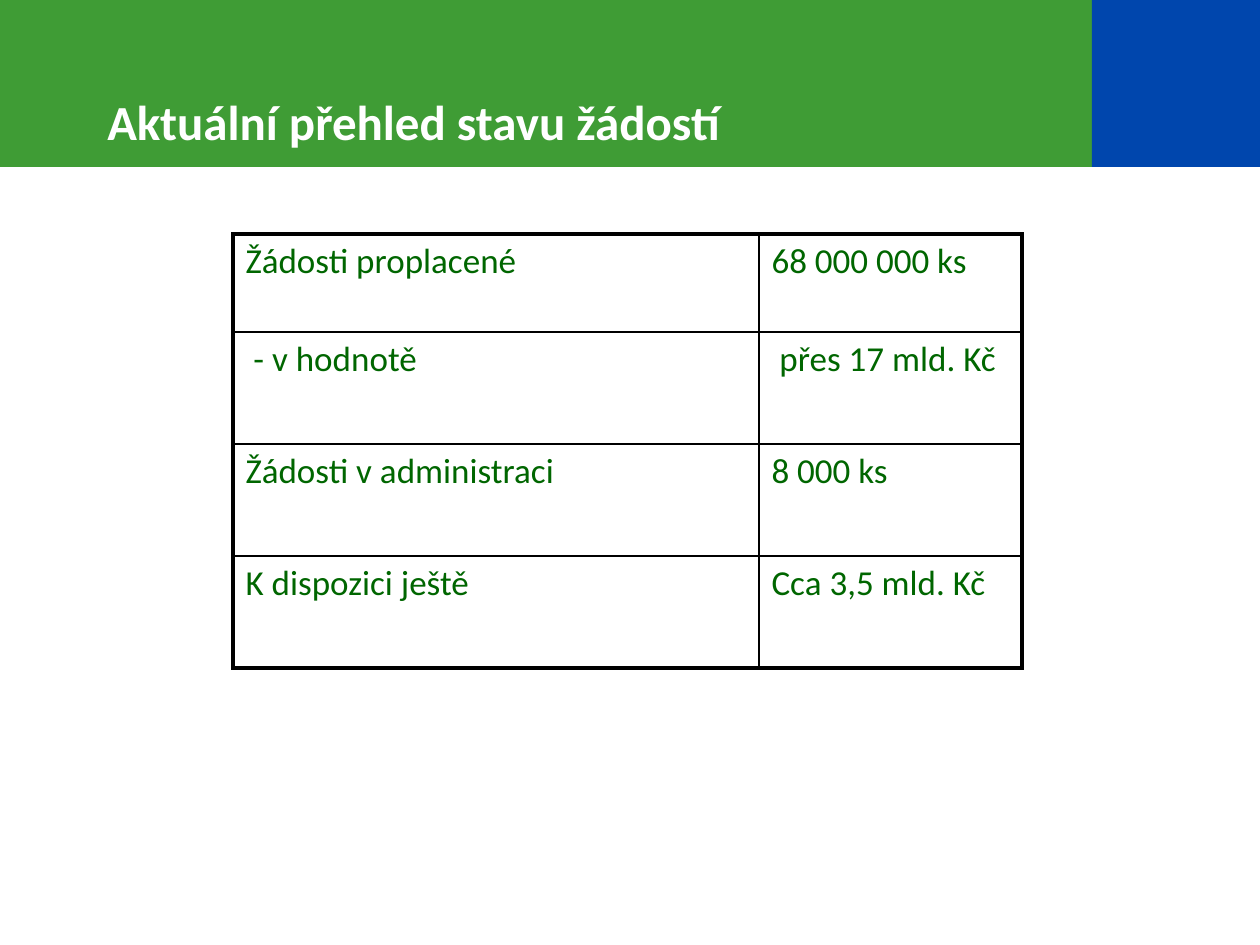
import pptx
import pptx.util
import pptx.dml.color
import pptx.enum.shapes
import pptx.enum.text
import pptx.oxml.ns
from lxml import etree

# Content
TITLE = "Aktuální přehled stavu žádostí"
ROWS = [
    ("Žádosti proplacené", "68 000 000 ks"),
    (" - v hodnotě", " přes 17 mld. Kč"),
    ("Žádosti v administraci", "8 000 ks"),
    ("K dispozici ještě", "Cca 3,5 mld. Kč"),
]

# Layout in px, 126 px to the inch
PX = 914400 // 126
SLIDE_SIZE = (1260, 945)
HEADER_HEIGHT = 167
HEADER_SPLIT = 1092
TITLE_BOX = (95, 85, 1071, 131)
TABLE_LEFT, TABLE_TOP = 233, 234
COLUMN_WIDTHS = (526, 263)
ROW_HEIGHTS = (98, 112, 112, 112)
OUTER_LINE, INNER_LINE = 2.25, 1

FONT = "Calibri"
COLORS = {"header": "3F9C35", "accent": "0046AD", "title": "FFFFFF",
          "text": "006600", "border": "000000"}


def px(*lengths):
    return [length * PX for length in lengths]


def rgb(name):
    return pptx.dml.color.RGBColor.from_string(COLORS[name])


def write_text(frame, text, size, color, bold=False):
    frame.word_wrap = True
    frame.vertical_anchor = pptx.enum.text.MSO_ANCHOR.TOP
    run = frame.paragraphs[0].add_run()
    run.text = text
    run.font.name = FONT
    run.font.size = pptx.util.Pt(size)
    run.font.bold = bold
    run.font.color.rgb = rgb(color)


def add_band(slide, left, right, color):
    shape = slide.shapes.add_shape(
        pptx.enum.shapes.MSO_SHAPE.RECTANGLE,
        *px(left, 0, right - left, HEADER_HEIGHT))
    shape.shadow.inherit = False
    shape.fill.solid()
    shape.fill.fore_color.rgb = rgb(color)
    shape.line.fill.background()


def set_borders(cell, outer_sides):
    properties = cell._tc.get_or_add_tcPr()
    qn = pptx.oxml.ns.qn
    for index, side in enumerate("LRTB"):
        width = OUTER_LINE if side in outer_sides else INNER_LINE
        line = etree.Element(qn(f"a:ln{side}"), w=str(int(width * 12700)))
        fill = etree.SubElement(line, qn("a:solidFill"))
        etree.SubElement(fill, qn("a:srgbClr"), val=COLORS["border"])
        properties.insert(index, line)


def add_status_table(slide):
    table = slide.shapes.add_table(
        len(ROWS), len(COLUMN_WIDTHS),
        *px(TABLE_LEFT, TABLE_TOP, sum(COLUMN_WIDTHS), sum(ROW_HEIGHTS))).table
    table.first_row = table.horz_banding = False
    for column, width in zip(table.columns, COLUMN_WIDTHS):
        column.width = width * PX
    for row, height in zip(table.rows, ROW_HEIGHTS):
        row.height = height * PX
    for row_index, texts in enumerate(ROWS):
        for column_index, text in enumerate(texts):
            cell = table.cell(row_index, column_index)
            cell.fill.background()
            write_text(cell.text_frame, text, size=20, color="text")
            edges = {"L": column_index == 0, "R": column_index == len(texts) - 1,
                     "T": row_index == 0, "B": row_index == len(ROWS) - 1}
            set_borders(cell, [side for side, outer in edges.items() if outer])


def main():
    presentation = pptx.Presentation()
    presentation.slide_width, presentation.slide_height = px(*SLIDE_SIZE)
    slide = presentation.slides.add_slide(presentation.slide_layouts[6])

    # Header bands and title
    add_band(slide, 0, HEADER_SPLIT, "header")
    add_band(slide, HEADER_SPLIT, SLIDE_SIZE[0], "accent")
    title = slide.shapes.add_textbox(*px(*TITLE_BOX))
    write_text(title.text_frame, TITLE, size=28, color="title", bold=True)

    # Request status
    add_status_table(slide)
    presentation.save("out.pptx")


if __name__ == "__main__":
    main()
